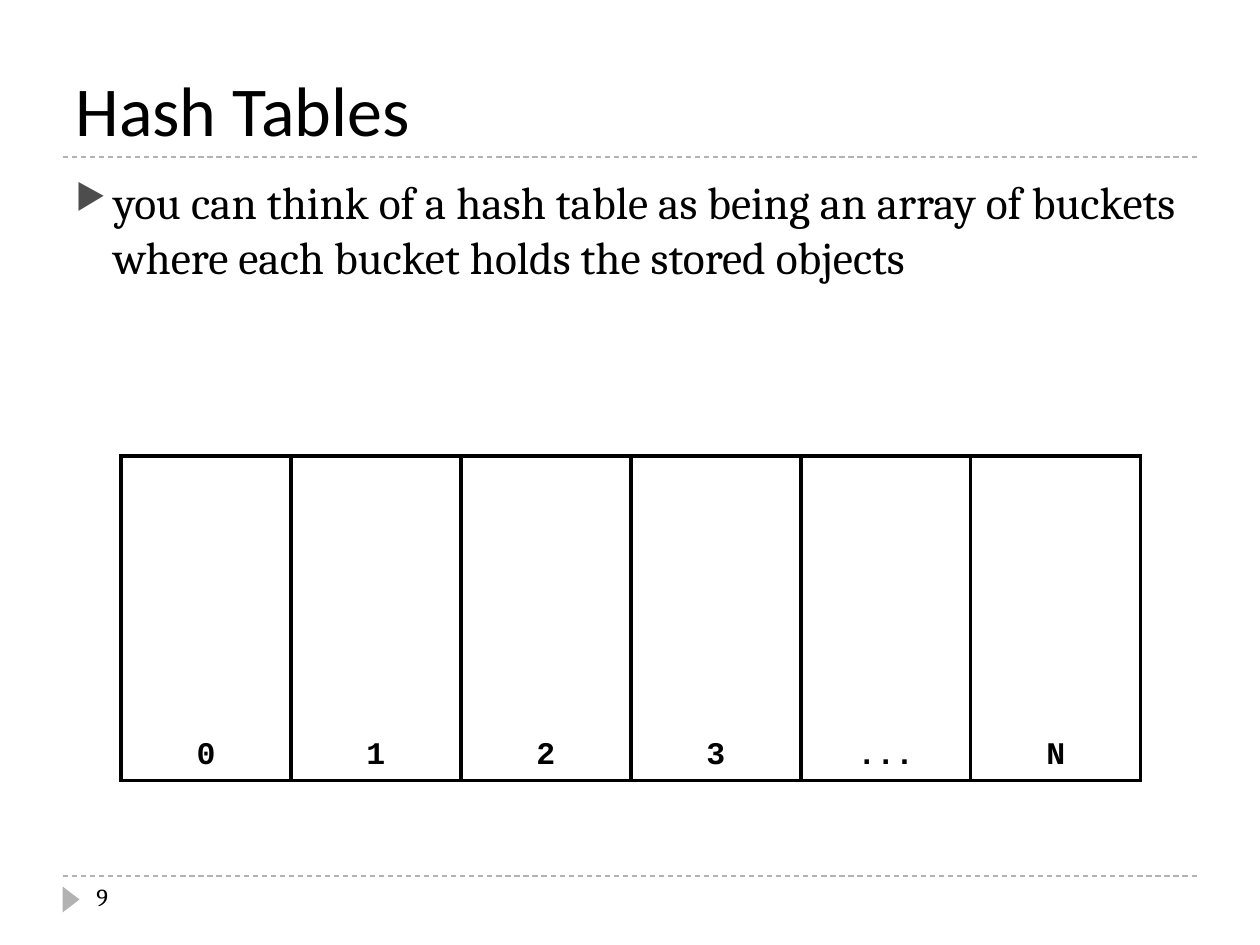
from dataclasses import dataclass

from lxml import etree
from pptx import Presentation
from pptx.dml.color import RGBColor
from pptx.enum.dml import MSO_LINE
from pptx.enum.shapes import MSO_CONNECTOR, MSO_SHAPE
from pptx.enum.text import MSO_ANCHOR, MSO_AUTO_SIZE, PP_ALIGN
from pptx.oxml.ns import qn
from pptx.util import Emu, Pt

STRAIGHT = MSO_CONNECTOR.STRAIGHT
TRIANGLE = MSO_SHAPE.ISOSCELES_TRIANGLE
DASH = MSO_LINE.DASH
TOP, BOTTOM = MSO_ANCHOR.TOP, MSO_ANCHOR.BOTTOM
LEFT, CENTER = PP_ALIGN.LEFT, PP_ALIGN.CENTER
NO_FIT = MSO_AUTO_SIZE.NONE

PX_PER_INCH = 126
BUCKETS = ["0", "1", "2", "3", "...", "N"]


@dataclass(frozen=True)
class Theme:
    ink: str = "000000"
    paper: str = "FFFFFF"
    rule: str = "B2B2B2"
    bullet: str = "4D4D4D"
    rule_width: float = 0.75
    border_width: float = 2.25
    title: tuple = ("Calibri", 40, False)
    body: tuple = ("Cambria", 26, False)
    number: tuple = ("Cambria", 14, False)
    bucket: tuple = ("Courier New", 18, True)


THEME = Theme()


def px(length):
    return Emu(round(length * 914400 / PX_PER_INCH))


def box(left, top, width, height):
    return px(left), px(top), px(width), px(height)


def write(frame, text, style, align=LEFT):
    frame.text = text
    paragraph = frame.paragraphs[0]
    paragraph.alignment = align
    name, size, bold = style
    font = paragraph.runs[0].font
    for key, value in {"name": name, "size": Pt(size), "bold": bold}.items():
        setattr(font, key, value)
    font.color.rgb = RGBColor.from_string(THEME.ink)
    return paragraph


def format_frame(frame, anchor):
    settings = {"word_wrap": True, "auto_size": NO_FIT, "vertical_anchor": anchor}
    for key, value in settings.items():
        setattr(frame, key, value)


def add_title(slide, text):
    title = slide.shapes.title
    place = dict(zip(("left", "top", "width", "height"), box(63, 21, 1134, 136)))
    for key, value in place.items():
        setattr(title, key, value)
    format_frame(title.text_frame, BOTTOM)
    write(title.text_frame, text, THEME.title)


def add_text(slide, place, text, style):
    frame = slide.shapes.add_textbox(*place).text_frame
    format_frame(frame, TOP)
    return write(frame, text, style)


def add_bullet(paragraph, indent):
    paragraph.space_before = Pt(6)
    properties = paragraph._p.get_or_add_pPr()
    properties.set("marL", str(indent))
    properties.set("indent", str(-indent))
    color = etree.SubElement(properties, qn("a:buClr"))
    etree.SubElement(color, qn("a:srgbClr"), val=THEME.bullet)
    etree.SubElement(properties, qn("a:buSzPct"), val="76000")
    etree.SubElement(properties, qn("a:buChar"), char="▶")


def add_rule(slide, y):
    rule = slide.shapes.add_connector(STRAIGHT, px(63), px(y), px(1197), px(y))
    rule.line.color.rgb = RGBColor.from_string(THEME.rule)
    rule.line.width = Pt(THEME.rule_width)
    rule.line.dash_style = DASH
    etree.SubElement(rule._element.spPr, qn("a:effectLst"))


def add_page_marker(slide):
    marker = slide.shapes.add_shape(TRIANGLE, *box(58, 891, 26, 17))
    marker.rotation = 90
    marker.shadow.inherit = False
    marker.fill.solid()
    marker.fill.fore_color.rgb = RGBColor.from_string(THEME.rule)
    marker.line.fill.background()


def set_borders(cell, open_side):
    """Draw every side of the cell except open_side."""
    properties = cell._tc.get_or_add_tcPr()
    for side in ("lnL", "lnR", "lnT", "lnB"):
        line = etree.SubElement(properties, qn(f"a:{side}"), w=str(Pt(THEME.border_width)))
        if side == open_side:
            etree.SubElement(line, qn("a:noFill"))
        else:
            fill = etree.SubElement(line, qn("a:solidFill"))
            etree.SubElement(fill, qn("a:srgbClr"), val=THEME.ink)


def add_buckets(slide, labels):
    """Draw one column per bucket, with its label in the row below."""
    table = slide.shapes.add_table(2, len(labels), *box(121, 456, 1020, 320)).table
    for row, height in zip(table.rows, (276, 44)):
        row.height = px(height)
    for column, label in enumerate(labels):
        table.columns[column].width = px(170)
        for row, open_side in enumerate(("lnB", "lnT")):
            cell = table.cell(row, column)
            set_borders(cell, open_side)
            cell.fill.solid()
            cell.fill.fore_color.rgb = RGBColor.from_string(THEME.paper)
        write(table.cell(1, column).text_frame, label, THEME.bucket, CENTER)


def main():
    presentation = Presentation()
    presentation.slide_width = px(1260)
    presentation.slide_height = px(945)
    slide = presentation.slides.add_slide(presentation.slide_layouts[5])

    for y in (876, 157):
        add_rule(slide, y)
    add_page_marker(slide)
    add_title(slide, "Hash Tables")
    add_text(slide, box(84, 876, 273, 50), "9", THEME.number)
    statement = add_text(
        slide,
        box(63, 168, 1134, 680),
        "you can think of a hash table as being an array of buckets "
        "where each bucket holds the stored objects",
        THEME.body,
    )
    add_bullet(statement, px(38))
    add_buckets(slide, BUCKETS)

    presentation.save("out.pptx")


if __name__ == "__main__":
    main()
